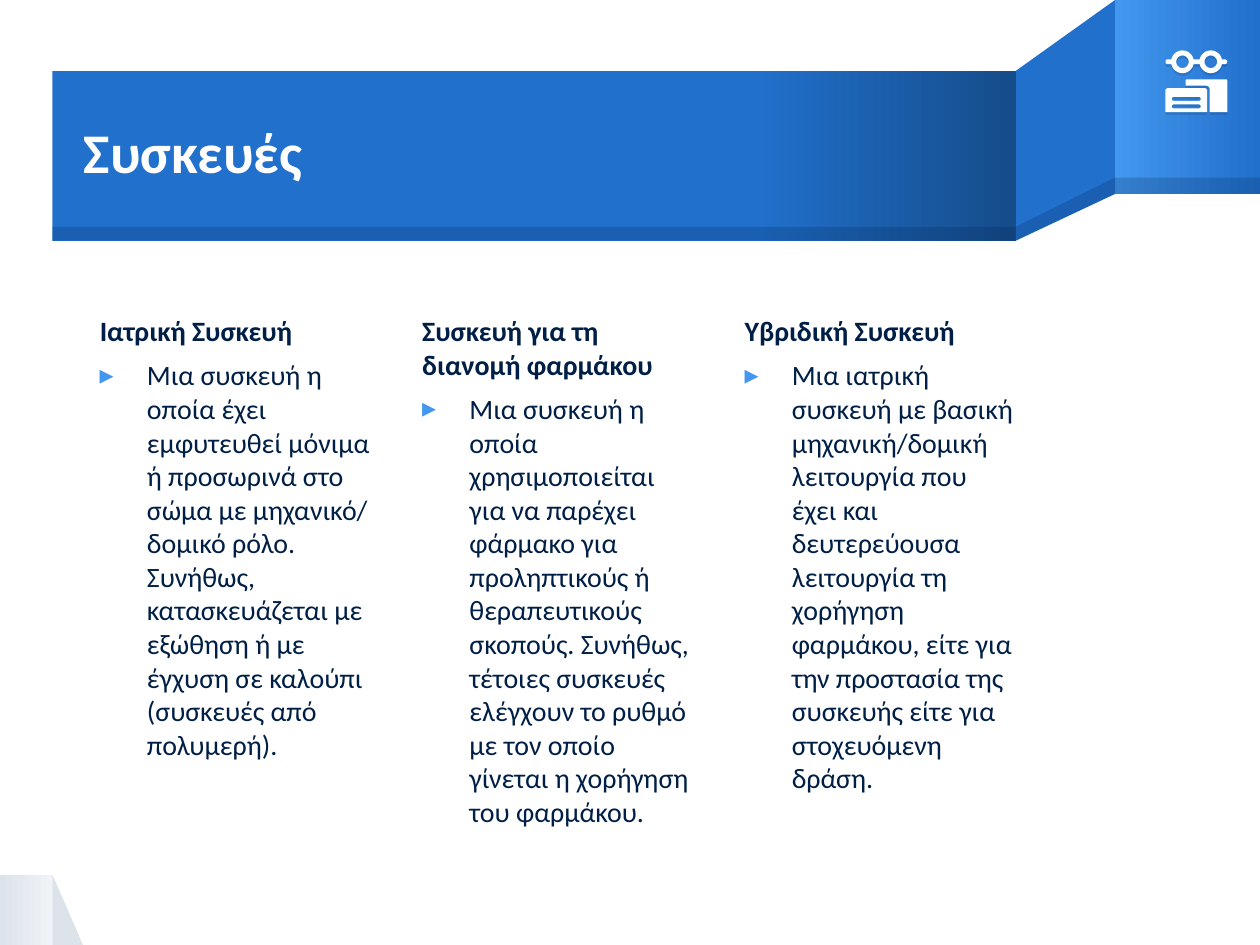
"""Builds a slide comparing three kinds of medical devices under a folded ribbon title."""
import math

import lxml.etree
import pptx
import pptx.dml.color
import pptx.enum.shapes
import pptx.enum.text
import pptx.oxml
import pptx.oxml.ns
import pptx.util

Pt = pptx.util.Pt
RGBColor = pptx.dml.color.RGBColor
SHAPE = pptx.enum.shapes.MSO_SHAPE
ANCHOR = pptx.enum.text.MSO_ANCHOR
qn = pptx.oxml.ns.qn

TITLE = "Συσκευές"
COLUMNS = [
    ("Ιατρική Συσκευή",
     "Μια συσκευή η οποία έχει εμφυτευθεί μόνιμα ή προσωρινά στο σώμα με μηχανικό/ δομικό ρόλο. "
     "Συνήθως, κατασκευάζεται με εξώθηση ή με έγχυση σε καλούπι (συσκευές από πολυμερή)."),
    ("Συσκευή για τη διανομή φαρμάκου",
     "Μια συσκευή η οποία χρησιμοποιείται για να παρέχει φάρμακο για προληπτικούς ή θεραπευτικούς "
     "σκοπούς. Συνήθως, τέτοιες συσκευές ελέγχουν το ρυθμό με τον οποίο γίνεται η χορήγηση του φαρμάκου."),
    ("Υβριδική Συσκευή",
     "Μια ιατρική συσκευή με βασική μηχανική/δομική λειτουργία που έχει και δευτερεύουσα λειτουργία "
     "τη χορήγηση φαρμάκου, είτε για την προστασία της συσκευής είτε για στοχευόμενη δράση."),
]

FONT = "Calibri"
WHITE = RGBColor(0xFF, 0xFF, 0xFF)
NAVY = RGBColor(0x00, 0x1F, 0x46)
BLUE = RGBColor(0x21, 0x70, 0xCC)
LIGHT_BLUE = RGBColor(0x43, 0x97, 0xEE)
DARK_BLUE = RGBColor(0x15, 0x4C, 0x8A)
GREY = RGBColor(0xDD, 0xE3, 0xEB)
LIGHT_GREY = RGBColor(0xF0, 0xF3, 0xF7)

SLIDE_WIDTH, SLIDE_HEIGHT = 720, 540
RIBBON_LEFT, RIBBON_TOP, RIBBON_BOTTOM = 30, 40.5, 137.5
FOLD_LEFT, FOLD_RIGHT, TAB_BOTTOM = 580.5, 637.2, 110.8
RIBBON_SHADE, TAB_SHADE = 129.6, 101.5
CORNER_TOP, CORNER_TIP = 499.8, 47.4
TEXT_LEFT, COLUMN_TOP, COLUMN_WIDTH, COLUMN_HEIGHT = 48, 179.3, 164, 285
COLUMN_STEP = (FOLD_LEFT - COLUMN_WIDTH - TEXT_LEFT) / (len(COLUMNS) - 1)


def arc(x, y, radius, start, end, steps=12):
    angles = [math.radians(start + (end - start) * i / steps) for i in range(steps + 1)]
    return [(x + radius * math.cos(a), y + radius * math.sin(a)) for a in angles]


def capsule(left, right, y, radius):
    return arc(left, y, radius, 90, 270) + arc(right, y, radius, 270, 450)


def paint(shape, colors, first_stop=0, alpha=None):
    shape.shadow.inherit = False
    shape.line.fill.background()
    if len(colors) == 1:
        shape.fill.solid()
        shape.fill.fore_color.rgb = colors[0]
    else:
        shape.fill.gradient()
        shape.fill.gradient_angle = 0
        for stop, color, position in zip(shape.fill.gradient_stops, colors, (first_stop, 1)):
            stop.color.rgb = color
            stop.position = position
    if alpha:
        color_element = next(shape.element.spPr.iter(qn("a:srgbClr")))
        lxml.etree.SubElement(color_element, qn("a:alpha"), val=str(alpha * 1000))


def add_box(slide, left, top, right, bottom, colors, preset=SHAPE.RECTANGLE, **options):
    shape = slide.shapes.add_shape(preset, Pt(left), Pt(top), Pt(right - left), Pt(bottom - top))
    paint(shape, colors, **options)


def add_outline(slide, contours, color, alpha=None):
    contours = [[(Pt(x), Pt(y)) for x, y in contour] for contour in contours]
    builder = slide.shapes.build_freeform(*contours[0][0])
    builder.add_line_segments(contours[0][1:])
    for contour in contours[1:]:
        builder.move_to(*contour[0])
        builder.add_line_segments(contour[1:])
    shape = builder.convert_to_shape()
    paint(shape, [color], alpha=alpha)
    return shape


def add_ribbon(slide):
    add_box(slide, RIBBON_LEFT, CORNER_TOP, CORNER_TIP, SLIDE_HEIGHT, [GREY], SHAPE.RIGHT_TRIANGLE)
    add_box(slide, 0, CORNER_TOP, RIBBON_LEFT, SLIDE_HEIGHT, [GREY, LIGHT_GREY])
    fold_base = [(FOLD_LEFT, RIBBON_BOTTOM), (FOLD_RIGHT, TAB_BOTTOM)]
    add_outline(slide, [[(FOLD_RIGHT, 0), (FOLD_LEFT, RIBBON_TOP), *fold_base, (FOLD_RIGHT, 0)]], BLUE)
    add_box(slide, FOLD_RIGHT, 0, SLIDE_WIDTH, TAB_BOTTOM, [LIGHT_BLUE, BLUE])
    add_box(slide, RIBBON_LEFT, RIBBON_TOP, FOLD_LEFT, RIBBON_BOTTOM, [BLUE, DARK_BLUE], first_stop=0.73)
    shade_start = (FOLD_RIGHT, TAB_SHADE)
    add_outline(slide, [[shade_start, (FOLD_LEFT, RIBBON_SHADE), *fold_base, shade_start]], NAVY, alpha=20)
    add_box(slide, FOLD_RIGHT, TAB_SHADE, SLIDE_WIDTH, TAB_BOTTOM, [NAVY], alpha=20)
    add_box(slide, RIBBON_LEFT, RIBBON_SHADE, FOLD_LEFT, RIBBON_BOTTOM, [NAVY], alpha=20)


def add_reading_icon(slide):
    lens_y, lens_radius, lenses = 35.3, 6.5, (675.7, 691.9)
    rim = arc(667.4, lens_y, 1.4, 90, 270)
    for x in lenses:
        rim += arc(x, lens_y, lens_radius, 192, 348)
    rim += arc(699.9, lens_y, 1.4, 270, 450)
    for x in reversed(lenses):
        rim += arc(x, lens_y, lens_radius, 12, 168)
    glasses = [rim + rim[:1]] + [arc(x, lens_y, 3.6, 0, 360, 24) for x in lenses]
    back_card = [(677.5, 49), *arc(678.2, 46.1, 0.7, 180, 270), *arc(700.6, 46.1, 0.7, 270, 360),
                 (701.3, 64.1), (691.2, 64.1), *arc(689.2, 51, 2, 0, -90), (677.5, 49)]
    front_card = [(666, 64.1), *arc(667.4, 51.8, 1.4, 180, 270),
                  *arc(688.4, 51.8, 1.4, 270, 360), (689.8, 64.1), (666, 64.1)]
    slots = [capsule(670.7, 685.1, y, 1.1) for y in (60.8, 56.5)]
    slots = [slot + slot[:1] for slot in slots]
    for contours in (glasses, [back_card], [front_card, *slots]):
        shape = add_outline(slide, contours, WHITE)
        effects = shape.element.spPr.find(qn("a:effectLst"))
        shadow = lxml.etree.SubElement(effects, qn("a:outerShdw"), dist=str(Pt(1.5)), dir="5400000",
                                       algn="bl", rotWithShape="0")
        color = lxml.etree.SubElement(shadow, qn("a:srgbClr"), val=str(NAVY))
        lxml.etree.SubElement(color, qn("a:alpha"), val="15000")


def fill_placeholder(placeholder, box, texts, anchor):
    placeholder.left, placeholder.top, placeholder.width, placeholder.height = map(Pt, box)
    placeholder.element.getparent().append(placeholder.element)
    frame = placeholder.text_frame
    frame.text = "\n".join(texts)
    frame.word_wrap = True
    frame.auto_size = pptx.enum.text.MSO_AUTO_SIZE.NONE
    frame.vertical_anchor = anchor
    frame.margin_left = frame.margin_top = frame.margin_right = frame.margin_bottom = 0
    return frame.paragraphs


def format_paragraph(paragraph, size, color, bold):
    paragraph.alignment = pptx.enum.text.PP_ALIGN.LEFT
    for run in paragraph.runs:
        run.font.name, run.font.size, run.font.bold = FONT, Pt(size), bold
        run.font.color.rgb = color


def set_indent(paragraph, margin, indent, bullet=None):
    properties = paragraph._p.get_or_add_pPr()
    properties.set("marL", str(Pt(margin)))
    properties.set("indent", str(Pt(indent)))
    if bullet:
        color = lxml.etree.SubElement(properties, qn("a:buClr"))
        lxml.etree.SubElement(color, qn("a:srgbClr"), val=str(LIGHT_BLUE))
        lxml.etree.SubElement(properties, qn("a:buChar"), char=bullet)
    else:
        lxml.etree.SubElement(properties, qn("a:buNone"))


def main():
    presentation = pptx.Presentation()
    presentation.slide_width, presentation.slide_height = Pt(SLIDE_WIDTH), Pt(SLIDE_HEIGHT)
    slide = presentation.slides.add_slide(presentation.slide_layouts.get_by_name("Comparison"))
    title, *bodies = slide.placeholders
    add_ribbon(slide)

    title_box = (TEXT_LEFT, RIBBON_TOP, FOLD_LEFT - TEXT_LEFT, RIBBON_BOTTOM - RIBBON_TOP)
    heading = fill_placeholder(title, title_box, [TITLE], ANCHOR.MIDDLE)[0]
    heading.line_spacing = 0.9
    format_paragraph(heading, 32, WHITE, True)

    for index, (body, texts) in enumerate(zip(bodies, COLUMNS)):
        box = (TEXT_LEFT + index * COLUMN_STEP, COLUMN_TOP, COLUMN_WIDTH, COLUMN_HEIGHT)
        name, description = fill_placeholder(body, box, texts, ANCHOR.TOP)
        for paragraph in (name, description):
            paragraph.space_before = Pt(6)
            format_paragraph(paragraph, 16, NAVY, paragraph is name)
        set_indent(name, 9, 0)
        set_indent(description, 36, -27, "▸")
    for unused in bodies[len(COLUMNS):]:
        unused.element.getparent().remove(unused.element)

    add_reading_icon(slide)
    presentation.save("out.pptx")


if __name__ == "__main__":
    main()
